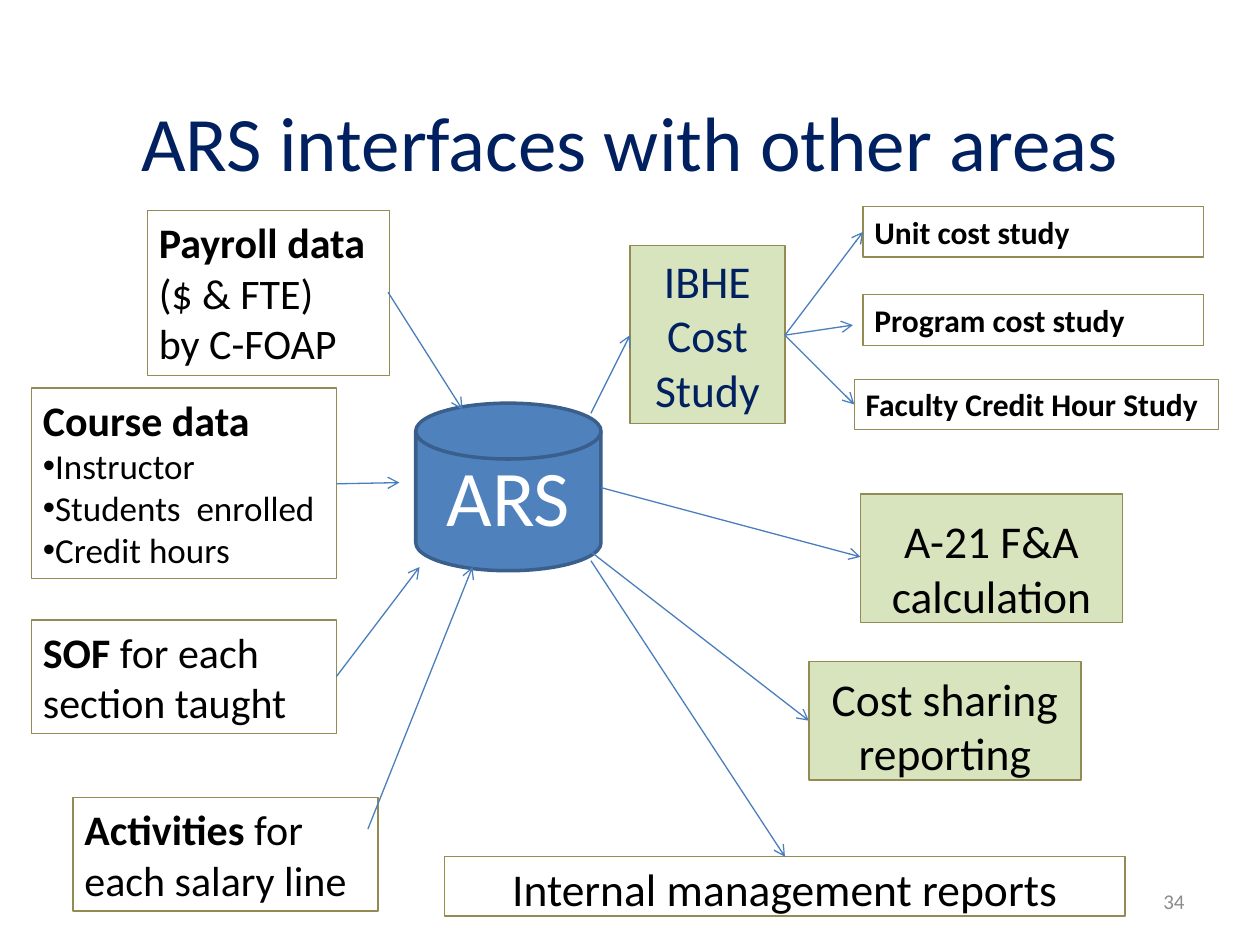
import pptx
import pptx.util
import pptx.dml.color
import pptx.enum.shapes
import pptx.enum.text
import pptx.oxml
import pptx.oxml.ns

Pt = pptx.util.Pt
Shape = pptx.enum.shapes.MSO_SHAPE
Fit = pptx.enum.text.MSO_AUTO_SIZE
LEFT, MID, RIGHT = (getattr(pptx.enum.text.PP_ALIGN, n) for n in ("LEFT", "CENTER", "RIGHT"))
TOP, CORE, BASE = (getattr(pptx.enum.text.MSO_ANCHOR, n) for n in ("TOP", "MIDDLE", "BOTTOM"))
NS = pptx.oxml.ns.nsdecls("a")

deck = pptx.Presentation()
deck.slide_width = pptx.util.Inches(10)
deck.slide_height = pptx.util.Inches(7.5)
slide = deck.slides.add_slide(deck.slide_layouts[5])
# Grid of 100 columns by 75 rows
col = deck.slide_width / 100
row = deck.slide_height / 75


def hue(code):
    return pptx.dml.color.RGBColor.from_string(code)


def write(frame, paras, size, tint, side, edge, pads):
    """Each paragraph is a list of runs; * marks bold, • marks a bullet."""
    look = dict(zip(("margin_left", "margin_top", "margin_right", "margin_bottom"),
                    (pptx.util.Inches(p) for p in pads)))
    look.update(word_wrap=True, vertical_anchor=edge)
    for key, val in look.items():
        setattr(frame, key, val)
    for i, runs in enumerate(paras):
        para = frame.paragraphs[0] if i == 0 else frame.add_paragraph()
        para.alignment = side
        item = runs[0].startswith("•")
        if item:
            prop = para._p.get_or_add_pPr()
            prop.set("marL", "0")
            prop.set("indent", "0")
            for tag in ('buFont %s typeface="Arial"', 'buChar %s char="•"'):
                prop.append(pptx.oxml.parse_xml(f"<a:{tag % NS}/>"))
        for text in runs:
            run = para.add_run()
            run.text = text.lstrip("*•")
            form = {"name": "Calibri", "size": Pt(20 if item else size),
                    "bold": text.startswith("*")}
            for key, val in form.items():
                setattr(run.font, key, val)
            run.font.color.rgb = hue(tint)


# Title
title = slide.shapes.title
spot = {"left": 5 * col, "top": 5.8 * row, "width": 90 * col, "height": 10.8 * row}
for key, val in spot.items():
    setattr(title, key, int(val))
wide = (0.1, 0.05, 0.1, 0.05)
write(title.text_frame, [["ARS interfaces with other areas"]], 44, "002060", MID, CORE, wide)

# Box styles: fill, size, text colour, alignment, anchor, padding
card = (0.09, 0.05, 0.09, 0.05)
tight = (0, 0.05, 0, 0)
styles = {
    "feed": (None, 24, "000000", LEFT, TOP, card),
    "study": (None, 18, "000000", LEFT, TOP, card),
    "hub": ("D7E4BD", 26, "002060", MID, CORE, wide),
    "use": ("D7E4BD", 26, "000000", MID, BASE, tight),
    "plain": (None, 26, "000000", MID, BASE, tight),
}

# Boxes: style, left, top, width, height, paragraphs
boxes = [
    ("hub", 50, 19.5, 12.3, 14.1, [["IBHE Cost Study"]]),
    ("feed", 2.5, 30.8, 24.2, 15.1,
     [["*Course data"], ["•Instructor"], ["•Students  enrolled"], ["•Credit hours"]]),
    ("feed", 11.7, 16.7, 19.2, 13.1, [["*Payroll data"], ["($ & FTE)"], ["by C-FOAP"]]),
    ("feed", 2.5, 49.2, 24.2, 9, [["*SOF ", "for each section taught"]]),
    ("feed", 5.8, 63.3, 24.2, 9, [["*Activities", " for each salary line"]]),
    ("study", 68.5, 16.4, 27, 4, [["*Unit cost study"]]),
    ("study", 68.5, 23.4, 27, 4, [["*Program cost study"]]),
    ("study", 67.8, 30.1, 28.9, 4, [["*Faculty Credit Hour Study"]]),
    ("use", 68.3, 39.2, 20.8, 10.2, [["A-21 F&A calculation"]]),
    ("use", 64.2, 52.5, 21.6, 9.4, [["Cost sharing reporting"]]),
    ("plain", 35.3, 68, 54, 4.7, [["Internal management reports"]]),
]
for kind, x, y, w, h, paras in boxes:
    fill, *form = styles[kind]
    box = slide.shapes.add_shape(
        Shape.RECTANGLE, int(x * col), int(y * row), int(w * col), int(h * row))
    box.shadow.inherit = False
    if fill:
        box.fill.solid()
        box.fill.fore_color.rgb = hue(fill)
    else:
        box.fill.background()
    box.line.color.rgb = hue("948A54")
    box.line.width = Pt(0.75)
    write(box.text_frame, paras, *form)
    if kind in ("feed", "study"):
        box.text_frame.auto_size = Fit.SHAPE_TO_FIT_TEXT

# Central store
disk = slide.shapes.add_shape(
    Shape.FLOWCHART_MAGNETIC_DISK, int(33 * col), int(32 * row), int(14.7 * col), int(13.3 * row))
disk.shadow.inherit = False
disk.fill.solid()
disk.fill.fore_color.rgb = hue("4F81BD")
disk.line.color.rgb = hue("3A5F8C")
disk.line.width = Pt(2)

# Store label and slide number
labels = [
    (33.8, 35.2, 13.1, 7.8, "ARS", 45, "FFFFFF", MID, BASE, tight),
    (71.7, 69.5, 23.3, 4, "34", 12, "8C8C8C", RIGHT, CORE, wide),
]
for x, y, w, h, text, *form in labels:
    box = slide.shapes.add_textbox(int(x * col), int(y * row), int(w * col), int(h * row))
    write(box.text_frame, [[text]], *form)

# Arrows: from x, y to x, y
arrows = [
    # into the store
    (26.7, 53.7, 33.3, 45), (26.7, 38.4, 31.7, 38.3),
    (30.8, 23.2, 36.7, 32.5), (29.2, 65.8, 37.5, 45),
    # out of the store
    (46.9, 32.8, 50, 26.6), (47.7, 38.7, 68.3, 44.2),
    (46.9, 43.8, 64.2, 57.2), (46.9, 44.5, 62.3, 68),
    # from the cost study
    (62.3, 26.6, 68.5, 18.4), (62.3, 26.6, 67.7, 25.8), (62.3, 26.6, 67.8, 32.1),
]
for x, y, u, v in arrows:
    link = slide.shapes.add_connector(
        pptx.enum.shapes.MSO_CONNECTOR.STRAIGHT,
        int(x * col), int(y * row), int(u * col), int(v * row))
    link.line.color.rgb = hue("4B7EBC")
    link.line.width = Pt(0.75)
    link.line._get_or_add_ln().append(pptx.oxml.parse_xml(f'<a:tailEnd {NS} type="arrow"/>'))
    link._element.spPr.append(pptx.oxml.parse_xml(f"<a:effectLst {NS}/>"))

deck.save("out.pptx")
